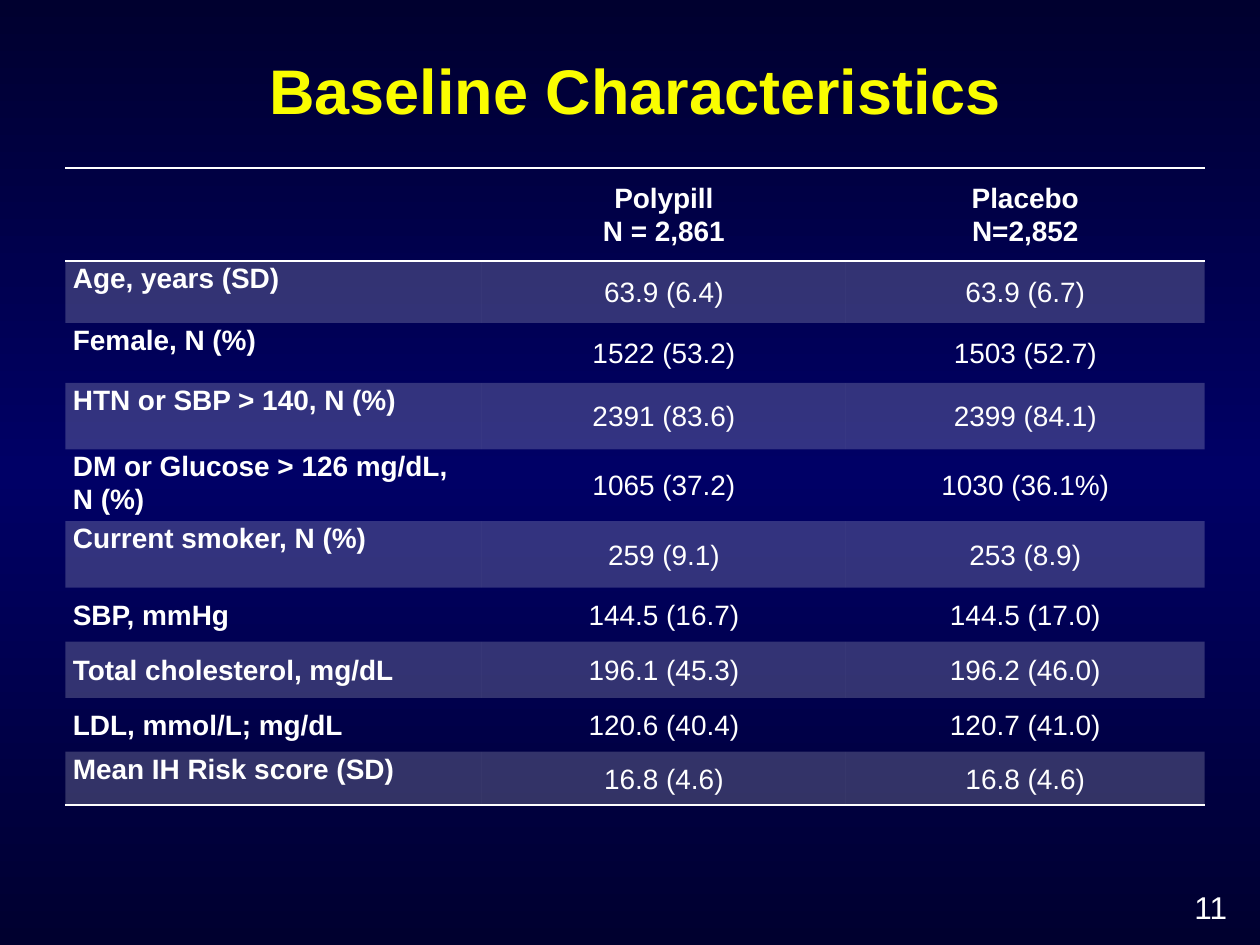
import copy

import lxml.etree
import pptx
import pptx.dml.color
import pptx.enum.text
import pptx.oxml.ns
import pptx.util

Pt = pptx.util.Pt
RGB = pptx.dml.color.RGBColor.from_string
ALIGN = pptx.enum.text.PP_ALIGN
ANCHOR = pptx.enum.text.MSO_ANCHOR
qn = pptx.oxml.ns.qn

# Content
TITLE = "Baseline Characteristics"
PAGE_NUMBER = "11"
HEADER = ("", "Polypill\nN = 2,861", "Placebo\nN=2,852")
# Label, polypill, placebo, label anchor, row height
ROWS = [
    ("Age, years (SD)", "63.9 (6.4)", "63.9 (6.7)", ANCHOR.TOP, 35.4),
    ("Female, N (%)", "1522 (53.2)", "1503 (52.7)", ANCHOR.TOP, 34.2),
    ("HTN or SBP > 140, N (%)", "2391 (83.6)", "2399 (84.1)", ANCHOR.TOP, 38),
    ("DM or Glucose > 126 mg/dL, N (%)", "1065 (37.2)", "1030 (36.1%)", ANCHOR.TOP, 38),
    ("Current smoker, N (%)", "259 (9.1)", "253 (8.9)", ANCHOR.TOP, 38),
    ("SBP, mmHg", "144.5 (16.7)", "144.5 (17.0)", ANCHOR.MIDDLE, 30.8),
    ("Total cholesterol, mg/dL", "196.1 (45.3)", "196.2 (46.0)", ANCHOR.MIDDLE, 32.2),
    ("LDL, mmol/L; mg/dL", "120.6 (40.4)", "120.7 (41.0)", ANCHOR.MIDDLE, 30.8),
    ("Mean IH Risk score (SD)", "16.8 (4.6)", "16.8 (4.6)", ANCHOR.TOP, 30.6),
]
HEADER_HEIGHT = 53.2
COLUMN_WIDTHS = (238, 208, 205)
TABLE_LEFT, TABLE_TOP = 37.4, 96

THEME = {
    "font": "Arial",
    "text": "FFFFFF",
    "title": "FAFD00",
    "band": "FFFFFF",
    "band_opacity": 20,
    "rule": "FFFFFF",
    "background": [(0, "00002F"), (0.5, "000066"), (1, "00002F")],
    "title_size": 36,
    "table_size": 16,
    "number_size": 18,
}
PLAIN_TABLE_STYLE = "{2D5ABB26-0587-4C30-8999-92F81FD0307C}"


def apply(target, values):
    for name, value in values.items():
        setattr(target, name, value)


def write(text_frame, text, size, color=THEME["text"], bold=False, **paragraph_format):
    text_frame.text = text
    for paragraph in text_frame.paragraphs:
        apply(paragraph, paragraph_format)
        apply(paragraph.font, {"name": THEME["font"], "size": Pt(size), "bold": bold})
        paragraph.font.color.rgb = RGB(color)


def paint_background(slide):
    fill = slide.background.fill
    fill.gradient()
    fill.gradient_angle = 270
    stop_list = next(slide.element.iter(qn("a:gsLst")))
    stop_list.append(copy.deepcopy(stop_list[0]))
    for stop, (position, color) in zip(fill.gradient_stops, THEME["background"]):
        stop.position = position
        stop.color.rgb = RGB(color)


def add_rule(cell, side):
    properties = cell._tc.get_or_add_tcPr()
    line = lxml.etree.SubElement(properties, qn(f"a:ln{side}"), w=str(Pt(1)))
    solid = lxml.etree.SubElement(line, qn("a:solidFill"))
    lxml.etree.SubElement(solid, qn("a:srgbClr"), val=THEME["rule"])


def fill_cell(cell, banded):
    if not banded:
        cell.fill.background()
        return
    cell.fill.solid()
    cell.fill.fore_color.rgb = RGB(THEME["band"])
    color = next(cell._tc.tcPr.find(qn("a:solidFill")).iter(qn("a:srgbClr")))
    lxml.etree.SubElement(color, qn("a:alpha"), val=str(THEME["band_opacity"] * 1000))


def add_characteristics_table(slide):
    lines = [(*HEADER, ANCHOR.MIDDLE, HEADER_HEIGHT), *ROWS]
    height = sum(line[-1] for line in lines)
    frame = slide.shapes.add_table(
        len(lines), len(COLUMN_WIDTHS), Pt(TABLE_LEFT), Pt(TABLE_TOP),
        Pt(sum(COLUMN_WIDTHS)), Pt(height))
    table = frame.table
    apply(table, {"first_row": False, "horz_banding": False})
    next(table._tbl.iter(qn("a:tableStyleId"))).text = PLAIN_TABLE_STYLE
    for column, width in zip(table.columns, COLUMN_WIDTHS):
        column.width = Pt(width)

    for row_index, (*texts, label_anchor, row_height) in enumerate(lines):
        table.rows[row_index].height = Pt(row_height)
        for column_index, text in enumerate(texts):
            cell = table.cell(row_index, column_index)
            is_label = column_index == 0
            apply(cell, {
                "margin_left": Pt(4.3), "margin_right": Pt(4.3),
                "margin_top": 0, "margin_bottom": 0,
                "vertical_anchor": label_anchor if is_label else ANCHOR.MIDDLE,
            })
            write(cell.text_frame, text, THEME["table_size"],
                  bold=is_label or row_index == 0, line_spacing=1.07,
                  alignment=ALIGN.LEFT if is_label else ALIGN.CENTER)
            # Rules above and below the header and under the last row
            if row_index == 0:
                add_rule(cell, "T")
            if row_index in (0, len(lines) - 1):
                add_rule(cell, "B")
            fill_cell(cell, banded=row_index % 2 == 1)


def main():
    presentation = pptx.Presentation()
    apply(presentation, {"slide_width": Pt(720), "slide_height": Pt(540)})
    slide = presentation.slides.add_slide(presentation.slide_layouts[6])
    paint_background(slide)

    # Title
    title = slide.shapes.add_textbox(Pt(48), Pt(31), Pt(630), Pt(46)).text_frame
    apply(title, {"word_wrap": True, "vertical_anchor": ANCHOR.BOTTOM})
    write(title, TITLE, THEME["title_size"], THEME["title"], bold=True,
          alignment=ALIGN.CENTER, line_spacing=0.9)

    # Baseline table
    add_characteristics_table(slide)

    # Page number
    number = slide.shapes.add_textbox(Pt(675.5), Pt(504), Pt(44.5), Pt(30)).text_frame
    number.word_wrap = True
    write(number, PAGE_NUMBER, THEME["number_size"])

    presentation.save("out.pptx")


if __name__ == "__main__":
    main()
